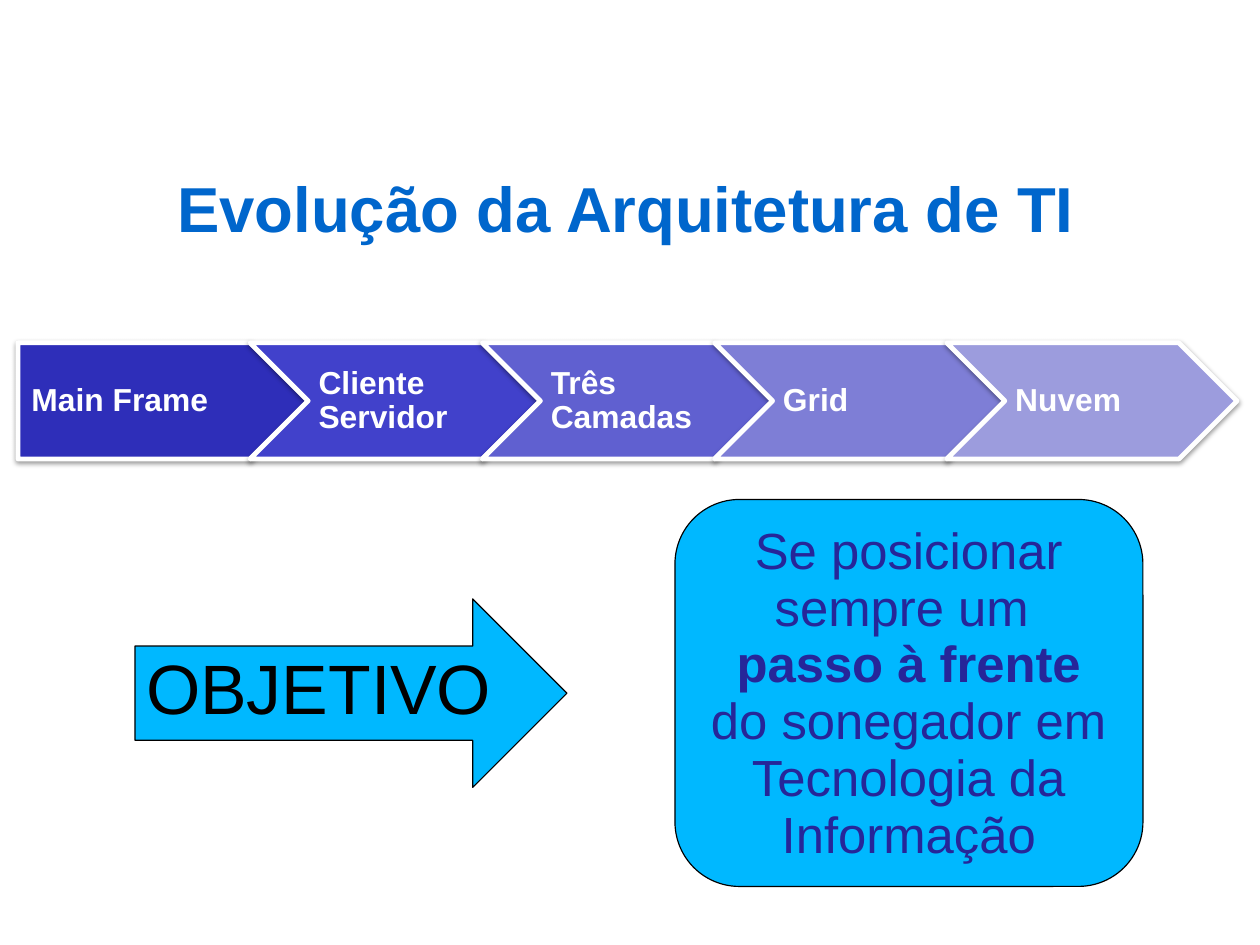
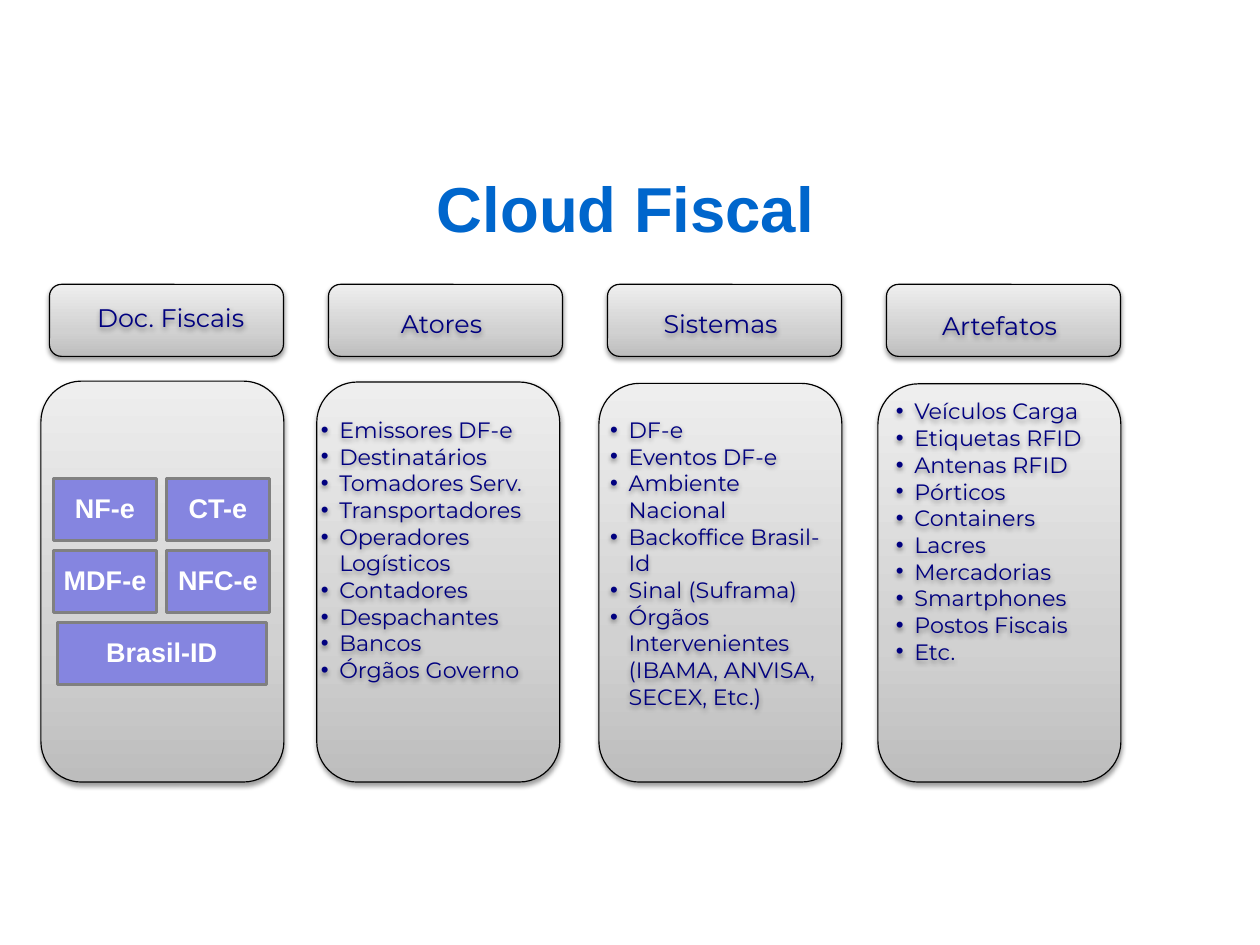
from lxml import etree
from pptx import Presentation
from pptx import util as u
from pptx.dml import color
from pptx.enum import shapes, text
from pptx.oxml import ns

COLORS = {
    "title": "0066CC", "white": "FFFFFF", "black": "000000",
    "sky": "00B8FF", "indigo": "262699", "navy": "00007F",
    "tile": "8585E0", "tile_edge": "808080",
}
STAGE_FILLS = ["2E2EB9", "4141CB", "6060D0", "7E7ED6", "9C9CDD"]
PANEL_STOPS = [(0, "BDBDBD"), (35, "D1D1D1"), (100, "EEEEEE")]

LEFT, CENTER = text.PP_ALIGN.LEFT, text.PP_ALIGN.CENTER
TOP, MIDDLE = text.MSO_ANCHOR.TOP, text.MSO_ANCHOR.MIDDLE
SHAPE = shapes.MSO_SHAPE

# Each style: font values, text colour, paragraph values, anchor, insets in cm
STYLES = {
    "title": dict(font=dict(name="Arial", size=u.Pt(40), bold=True), color="title",
                  para=dict(alignment=CENTER, line_spacing=1.02),
                  anchor=MIDDLE, insets=(0, 0, 0, 0)),
    "stage": dict(font=dict(name="Arial", size=u.Pt(20), bold=True), color="white",
                  para=dict(alignment=LEFT, line_spacing=0.9),
                  anchor=MIDDLE, insets=(0.23, 0.15, 0.08, 0.15)),
    "arrow": dict(font=dict(name="Arial", size=u.Pt(44)), color="black",
                  para=dict(alignment=LEFT, line_spacing=0.93),
                  anchor=TOP, insets=(0.25, 0.13, 0.25, 0.13)),
    "goal": dict(font=dict(name="Arial", size=u.Pt(32)), color="indigo",
                 para=dict(alignment=CENTER, line_spacing=0.93),
                 anchor=TOP, insets=(0.25, 0.13, 0.25, 0.13)),
    "header": dict(font=dict(name="Montserrat", size=u.Pt(16)), color="navy",
                   para=dict(alignment=CENTER),
                   anchor=TOP, insets=(0.25, 0.13, 0.25, 0.13)),
    "list": dict(font=dict(name="Montserrat", size=u.Pt(14)), color="navy",
                 para=dict(alignment=LEFT), bullet=True,
                 anchor=TOP, insets=(0.25, 0.13, 0.25, 0.13)),
    "tile": dict(font=dict(name="Arial", size=u.Pt(17), bold=True), color="white",
                 para=dict(alignment=CENTER, line_spacing=0.9),
                 anchor=MIDDLE, insets=(0.17, 0.17, 0.17, 0.17)),
}


def rgb(name):
    return color.RGBColor.from_string(COLORS.get(name, name))


def set_all(target, values):
    for key, value in values.items():
        setattr(target, key, value)


def add_element(parent, tag, **attributes):
    element = etree.SubElement(parent, ns.qn(tag))
    for key, value in attributes.items():
        element.set(key, str(value))
    return element


class Builder:
    """Holds the deck, its style and the current page."""

    def __init__(self, width, height):
        self.deck = Presentation()
        self.deck.slide_width, self.deck.slide_height = u.Cm(width), u.Cm(height)
        self.page = None

    def new_page(self, title):
        self.page = self.deck.slides.add_slide(self.deck.slide_layouts[6])
        self.label(title, (1.3, 2.69, 25.2, 3.78), "title")

    def fill_text(self, shape, paragraphs, style_name, insets=None):
        """A paragraph is a string or a list of (words, bold) pairs."""
        style = STYLES[style_name]
        frame = shape.text_frame
        frame.word_wrap = True
        frame.vertical_anchor = style["anchor"]
        sides = ("left", "top", "right", "bottom")
        set_all(frame, {f"margin_{side}": u.Cm(gap)
                        for side, gap in zip(sides, insets or style["insets"])})
        for index, content in enumerate(paragraphs):
            para = frame.add_paragraph() if index else frame.paragraphs[0]
            set_all(para, style["para"])
            if style.get("bullet"):
                self.bullet(para)
            pairs = [(content, None)] if isinstance(content, str) else content
            for words, bold in pairs:
                span = para.add_run()
                span.text = words
                set_all(span.font, style["font"])
                span.font.color.rgb = rgb(style["color"])
                if bold is not None:
                    span.font.bold = bold

    def bullet(self, para):
        properties = para._p.get_or_add_pPr()
        properties.set("marL", str(u.Cm(0.79)))
        properties.set("indent", str(u.Cm(-0.41)))
        add_element(properties, "a:buFont", typeface="Arial")
        add_element(properties, "a:buChar", char="•")

    def shadow(self, shape):
        shape.shadow.inherit = False
        effects = shape._element.spPr.find(ns.qn("a:effectLst"))
        outer = add_element(effects, "a:outerShdw", blurRad=40000, dist=20000,
                            dir=5400000, rotWithShape=0)
        tone = add_element(outer, "a:srgbClr", val=COLORS["black"])
        add_element(tone, "a:alpha", val=38000)

    def label(self, words, place, style, shadow=False):
        paragraphs = [words] if isinstance(words, str) else words
        box = self.page.shapes.add_textbox(*map(u.Cm, place))
        self.fill_text(box, paragraphs, style)
        if shadow:
            self.shadow(box)

    def shape(self, kind, place, fill=None, line="black", weight=0.75):
        shape = self.page.shapes.add_shape(kind, *map(u.Cm, place))
        shape.shadow.inherit = False
        if fill:
            shape.fill.solid()
            shape.fill.fore_color.rgb = rgb(fill)
        shape.line.color.rgb = rgb(line)
        shape.line.width = u.Pt(weight)
        return shape

    def panel(self, place):
        """Rounded grey panel, light at the top, with a soft shadow."""
        shape = self.shape(SHAPE.ROUNDED_RECTANGLE, place)
        shape.fill.gradient()
        shape.fill.gradient_angle = 90
        stops = shape._element.spPr.find(".//" + ns.qn("a:gsLst"))
        for stop in list(stops):
            stops.remove(stop)
        for position, tone in PANEL_STOPS:
            stop = add_element(stops, "a:gs", pos=position * 1000)
            add_element(stop, "a:srgbClr", val=tone)
        self.shadow(shape)

    def stage(self, index, name):
        first = index == 0
        kind = SHAPE.PENTAGON if first else SHAPE.CHEVRON
        shape = self.shape(kind, (0.4 + 5.16 * index, 7.62, 6.45, 2.58),
                           STAGE_FILLS[index], "white", 3)
        self.shadow(shape)
        self.fill_text(shape, [name], "stage",
                       (0.3, 0.15, 0.08, 0.15) if first else None)

    def tile(self, name, left, top, width):
        shape = self.shape(SHAPE.RECTANGLE, (left, top, width, 1.37),
                           "tile", "tile_edge", 2)
        self.fill_text(shape, [name], "tile")


def evolution_page(builder):
    builder.new_page("Evolução da Arquitetura de TI")

    # Row of stages
    names = ["Main Frame", "Cliente Servidor", "Três Camadas", "Grid", "Nuvem"]
    for index, name in enumerate(names):
        builder.stage(index, name)

    # Goal
    arrow = builder.shape(SHAPE.RIGHT_ARROW, (3, 13.31, 9.6, 4.19), "sky")
    builder.fill_text(arrow, ["OBJETIVO"], "arrow")
    goal = builder.shape(SHAPE.ROUNDED_RECTANGLE, (15, 11.1, 10.4, 8.6), "sky")
    builder.fill_text(goal, [
        "Se posicionar sempre um ",
        [("passo à frente ", True),
         ("do sonegador em Tecnologia da Informação", False)],
    ], "goal")


def cloud_page(builder):
    builder.new_page("Cloud Fiscal")

    # Columns: header, label left and top, panel left and top, list left and top, items
    columns = [
        ("Doc. Fiscais", (1.09, 6.58), (0.91, 8.47), None, []),
        ("Atores", (7.11, 6.71), (7.04, 8.49), (6.5, 9.12),
         ["Emissores DF-e", "Destinatários", "Tomadores Serv.", "Transportadores",
          "Operadores Logísticos", "Contadores", "Despachantes", "Bancos",
          "Órgãos Governo"]),
        ("Sistemas", (13.31, 6.71), (13.31, 8.52), (12.93, 9.12),
         ["DF-e", "Eventos DF-e", "Ambiente Nacional", "Backoffice Brasil-Id",
          "Sinal (Suframa)",
          "Órgãos Intervenientes (IBAMA, ANVISA, SECEX, Etc.)"]),
        ("Artefatos", (19.51, 6.76), (19.51, 8.53), (19.28, 8.71),
         ["Veículos Carga", "Etiquetas RFID", "Antenas RFID", "Pórticos",
          "Containers", "Lacres", "Mercadorias", "Smartphones",
          "Postos Fiscais", "Etc."]),
    ]
    panel_bottom = 17.38
    for index, (header, label_at, panel_at, list_at, items) in enumerate(columns):
        builder.panel((*panel_at, 5.4, panel_bottom - panel_at[1]))
        builder.panel((1.1 + 6.2 * index, 6.32, 5.2, 1.6))
        builder.label(header, (*label_at, 5.41, 0.94), "header", shadow=True)
        if items:
            builder.label(items, (*list_at, 5.84, 7), "list", shadow=True)

    # Document tiles
    top, row_step = 10.64, 1.6
    for index, name in enumerate(["NF-e", "CT-e", "MDF-e", "NFC-e"]):
        row, column = divmod(index, 2)
        builder.tile(name, 1.19 + 2.51 * column, top + row_step * row, 2.29)
    builder.tile("Brasil-ID", 1.27, top + row_step * 2, 4.65)


def main():
    builder = Builder(28, 21)
    evolution_page(builder)
    cloud_page(builder)
    builder.deck.save("out.pptx")


if __name__ == "__main__":
    main()
